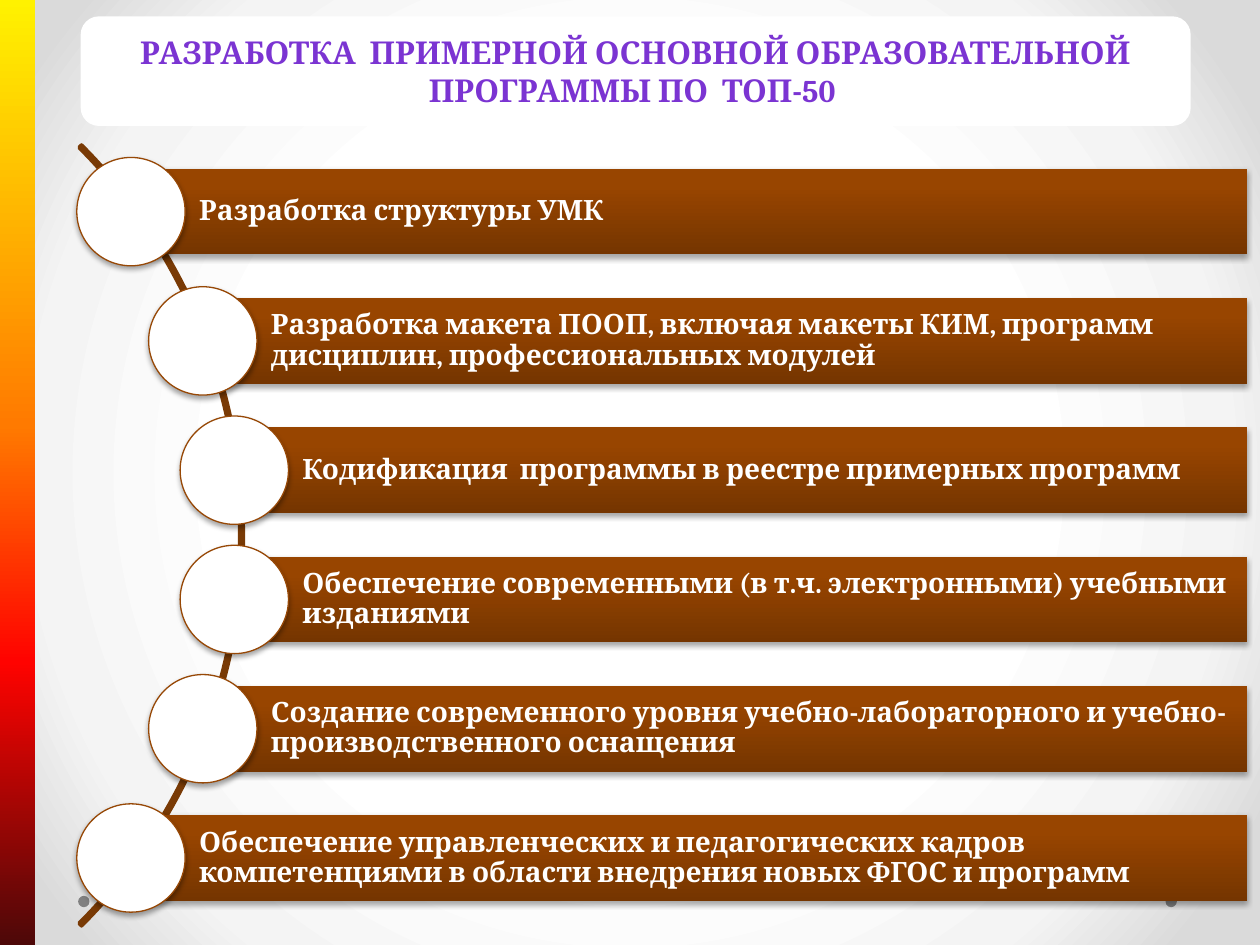
from lxml import etree
from pptx import Presentation
from pptx.dml.color import RGBColor
from pptx.enum.shapes import MSO_SHAPE
from pptx.enum.text import MSO_ANCHOR, PP_ALIGN
from pptx.oxml import parse_xml
from pptx.oxml.ns import qn
from pptx.util import Inches, Pt

OVAL, RECT = MSO_SHAPE.OVAL, MSO_SHAPE.RECTANGLE
ROUNDED, ARC = MSO_SHAPE.ROUNDED_RECTANGLE, MSO_SHAPE.BLOCK_ARC
MIDDLE = MSO_ANCHOR.MIDDLE
LEFT, CENTER = PP_ALIGN.LEFT, PP_ALIGN.CENTER
NAMESPACE = 'xmlns:a="http://schemas.openxmlformats.org/drawingml/2006/main"'
COLORS = {"white": "FFFFFF", "dot": "808080", "arc": "793A05", "ring": "974806", "shadow": "000000"}
GRADIENTS = {
    "backdrop": [(50, "FFFFFF"), (76, "F4F4F4"), (92, "DADADA")],
    "bar": [(0, "753500"), (80, "984500"), (100, "994600")],
    "title": [(0, "3D1B67"), (43, "7B34D2"), (48, "7330C4"), (100, "3D1B67")],
    "stripe": [(0, "FFF200"), (45, "FF7A00"), (70, "FF0300"), (100, "4D0808")],
}
LINEAR = '<a:lin ang="{}" scaled="0"/>'
CIRCULAR = '<a:path path="circle"><a:fillToRect l="50000" t="50000" r="50000" b="50000"/></a:path>'
SHADOW = (f'<a:effectLst {NAMESPACE}><a:outerShdw blurRad="{Pt(3.1)}" dist="{Pt(1.8)}" dir="5400000" '
          f'rotWithShape="0"><a:srgbClr val="{COLORS["shadow"]}"><a:alpha val="35000"/></a:srgbClr>'
          '</a:outerShdw></a:effectLst>')


def set_gradient(fill, parent, name, direction):
    """Swap a solid fill of the parent element for a gradient with many stops."""
    fill.solid()
    stops = "".join(f'<a:gs pos="{place * 1000}"><a:srgbClr val="{color}"/></a:gs>'
                    for place, color in GRADIENTS[name])
    gradient = parse_xml(f'<a:gradFill {NAMESPACE} rotWithShape="1"><a:gsLst>{stops}</a:gsLst>'
                         f'{direction}</a:gradFill>')
    parent.replace(parent.find(qn("a:solidFill")), gradient)


def write_text(shape, text, size=16, align=LEFT, spacing=None, color="white"):
    frame = shape.text_frame
    frame.word_wrap = True
    frame.vertical_anchor = MIDDLE
    para = frame.paragraphs[0]
    para.alignment = align
    para.line_spacing = spacing
    span = para.add_run()
    span.text = text
    span.font.name = "Cambria"
    span.font.size = Pt(size)
    span.font.bold = True
    span.font.color.rgb = RGBColor.from_string(COLORS[color])
    return span


deck = Presentation()
deck.slide_width, deck.slide_height = Inches(10), Inches(7.5)
page = deck.slides.add_slide(deck.slide_layouts[6])
shapes = page.shapes

# Backdrop
backdrop = page.background.fill
backdrop.solid()
set_gradient(backdrop, page._element.xpath(".//p:bgPr")[0], "backdrop", CIRCULAR)

# Corner dots
for left in (9.25, 0.62):
    dot = shapes.add_shape(OVAL, Inches(left), Inches(7.11), Inches(0.09), Inches(0.09))
    dot.shadow.inherit = False
    dot.fill.solid()
    dot.fill.fore_color.rgb = RGBColor.from_string(COLORS["dot"])
    dot.line.fill.background()

# Arc that joins the steps
arc = shapes.add_shape(ARC, Inches(-6.83), Inches(-0.13), Inches(8.76), Inches(8.76))
arc.shadow.inherit = False
for index, value in enumerate((189, 27, 0.003)):
    arc.adjustments[index] = value
arc.fill.background()
arc.line.color.rgb = RGBColor.from_string(COLORS["arc"])
arc.line.width = Pt(2.25)

# Steps: a bar with its text, and a circle over its left end
STEPS = [
    (1.04, "Разработка структуры УМК"),
    (1.61, "Разработка макета ПООП, включая макеты КИМ, программ дисциплин, профессиональных модулей"),
    (1.86, "Кодификация  программы в реестре примерных программ"),
    (1.86, "Обеспечение современными (в т.ч. электронными) учебными изданиями"),
    (1.61, "Создание современного уровня учебно-лабораторного и учебно-производственного оснащения"),
    (1.04, "Обеспечение управленческих и педагогических кадров компетенциями в области внедрения "
           "новых ФГОС и программ"),
]
FIRST_TOP, LAST_TOP, BAR_RIGHT = 1.34, 6.47, 9.9
STEP = (LAST_TOP - FIRST_TOP) / (len(STEPS) - 1)
for index, (left, text) in enumerate(STEPS):
    top = FIRST_TOP + index * STEP
    bar = shapes.add_shape(RECT, Inches(left), Inches(top), Inches(BAR_RIGHT - left), Inches(0.68))
    set_gradient(bar.fill, bar._element.spPr, "bar", LINEAR.format(16200000))
    bar.line.fill.background()
    write_text(bar, text, spacing=0.9)
    frame = bar.text_frame
    frame.margin_left = Inches(0.54)
    frame.margin_right = frame.margin_top = frame.margin_bottom = Inches(0.04)

    circle = shapes.add_shape(OVAL, Inches(left - 0.43), Inches(top - 0.09), Inches(0.86), Inches(0.86))
    circle.fill.solid()
    circle.fill.fore_color.rgb = RGBColor.from_string(COLORS["white"])
    circle.line.color.rgb = RGBColor.from_string(COLORS["ring"])
    circle.line.width = Pt(0.75)
    for shape in (bar, circle):
        shape._element.spPr.append(etree.fromstring(SHADOW))

# Title
title = shapes.add_shape(ROUNDED, Inches(0.64), Inches(0.13), Inches(8.81), Inches(0.87))
title.shadow.inherit = False
title.fill.solid()
title.fill.fore_color.rgb = RGBColor.from_string(COLORS["white"])
title.line.fill.background()
heading = write_text(title, "РАЗРАБОТКА  ПРИМЕРНОЙ ОСНОВНОЙ ОБРАЗОВАТЕЛЬНОЙ ПРОГРАММЫ ПО  ТОП-50 ",
                     size=18, align=CENTER)
set_gradient(heading.font.fill, heading.font._element, "title", LINEAR.format(5400000))

# Left stripe
stripe = shapes.add_shape(RECT, 0, 0, Inches(0.28), deck.slide_height)
stripe.shadow.inherit = False
set_gradient(stripe.fill, stripe._element.spPr, "stripe", LINEAR.format(5400000))
stripe.line.fill.background()

deck.save("out.pptx")
